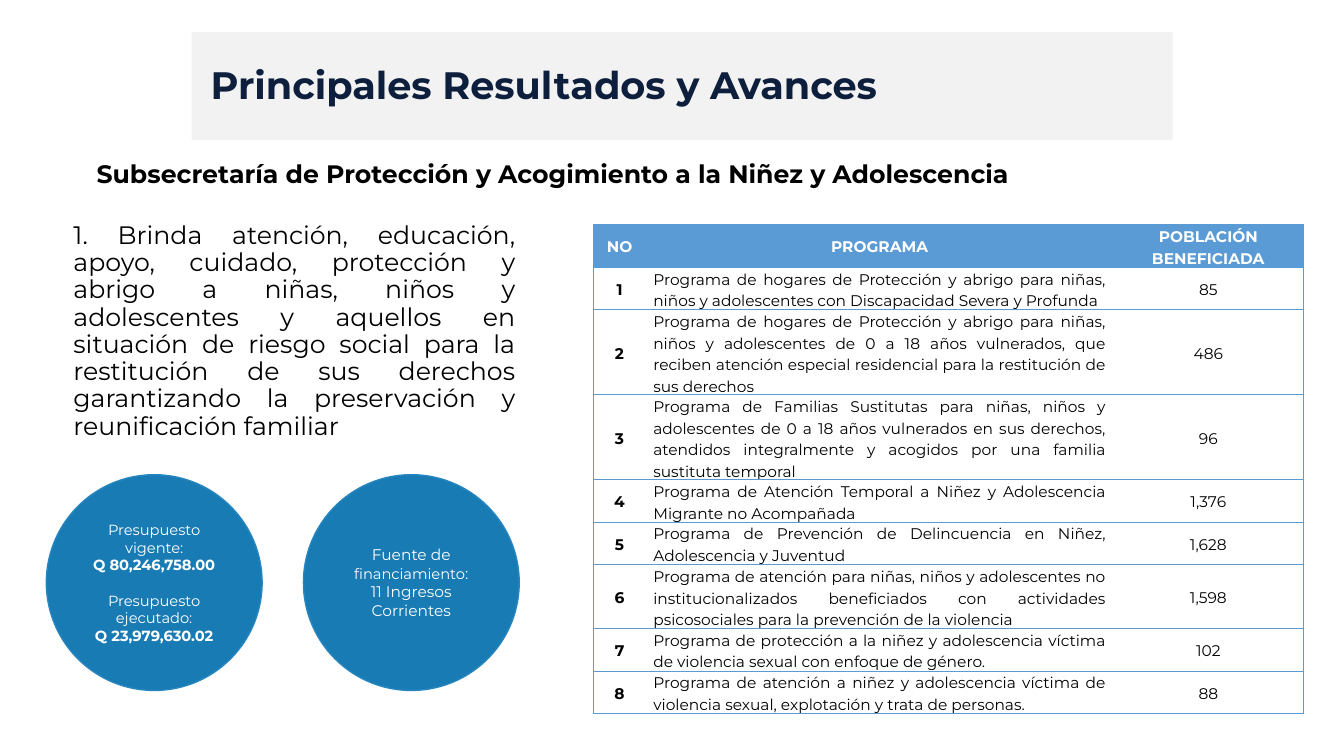
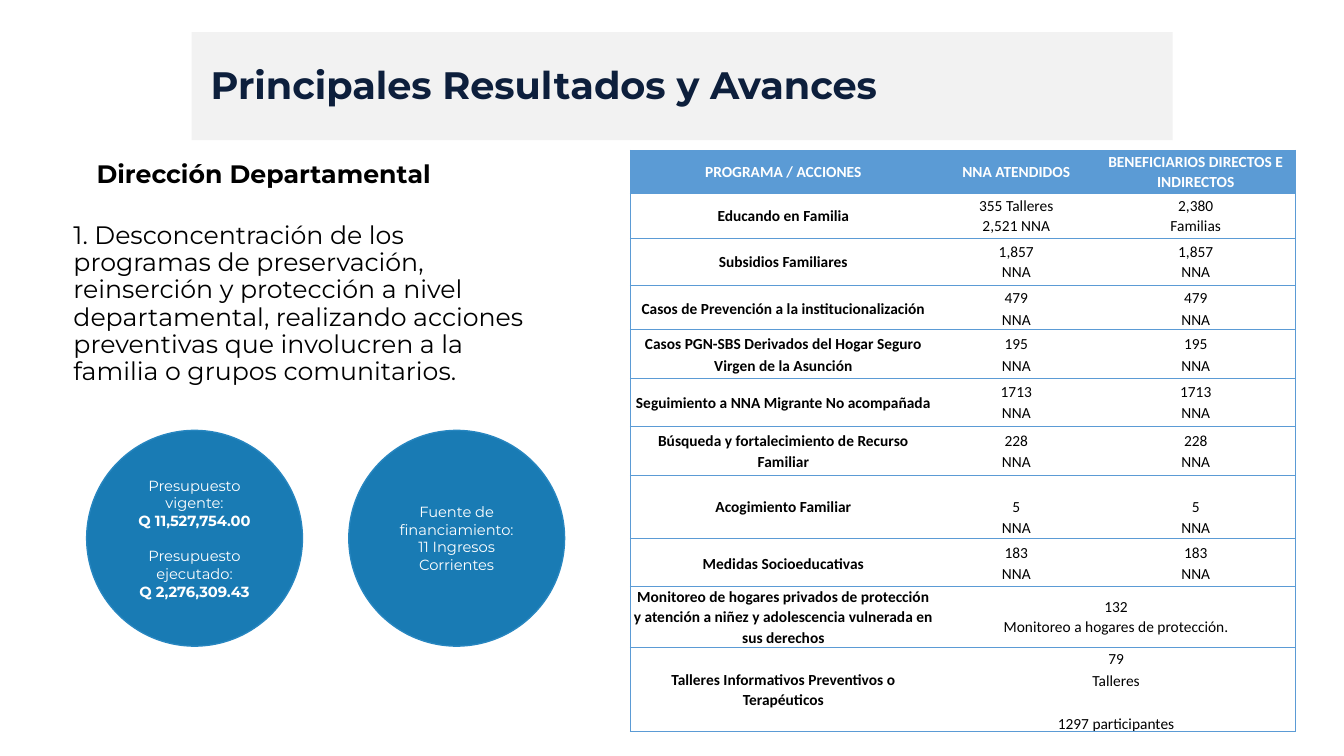
from dataclasses import dataclass

from lxml.etree import SubElement
from pptx import Presentation
from pptx.dml.color import RGBColor
from pptx.enum.shapes import MSO_SHAPE
from pptx.enum.text import MSO_ANCHOR, PP_ALIGN
from pptx.oxml.ns import qn
from pptx.util import Inches, Pt


@dataclass(frozen=True)
class Theme:
    """Colours, fonts and type sizes of the presentation."""
    white: str = "FFFFFF"
    black: str = "000000"
    navy: str = "0D1F3C"
    band: str = "F2F2F2"
    circle: str = "197BB4"
    circle_line: str = "2786C0"
    table: str = "5B9BD5"
    font: str = "Montserrat"
    table_font: str = "Calibri"
    title_size: float = 27.3
    body_size: float = 18
    table_size: float = 11
    circle_size: float = 10.5


@dataclass(frozen=True)
class Box:
    """A region of the slide in inches."""
    left: float
    top: float
    width: float
    height: float

    def lengths(self):
        """Return the four measures as lengths."""
        return [Inches(value) for value in (self.left, self.top, self.width, self.height)]


@dataclass(frozen=True)
class Cell:
    """Content and format of one table cell."""
    lines: tuple
    bold: bool = False
    color: str = Theme.black
    align: PP_ALIGN = PP_ALIGN.CENTER
    anchor: MSO_ANCHOR = MSO_ANCHOR.MIDDLE
    spacing: float = 1.15
    top_margin: float = 0
    last_gap: float = 0


THEME = Theme()
BAND_BOX = Box(1.9, 0.32, 9.73, 1.07)
TITLE_BOX = Box(1.99, 0.5, 8.69, 0.73)
SUBTITLE_BOX = Box(0.86, 1.56, 11.5, 0.61)
CIRCLE_SIDE = 2.14
LINE_HEIGHT = 0.21

PROGRAMS = [
    ("Programa de hogares de Protección y abrigo para niñas, niños y adolescentes con "
     "Discapacidad Severa y Profunda", "85", 2),
    ("Programa de hogares de Protección y abrigo para niñas, niños y adolescentes de 0 a 18 años "
     "vulnerados, que reciben atención especial residencial para la restitución de sus derechos",
     "486", 4),
    ("Programa de Familias Sustitutas para niñas, niños y adolescentes de 0 a 18 años vulnerados "
     "en sus derechos, atendidos integralmente y acogidos por una familia sustituta temporal",
     "96", 4),
    ("Programa de Atención Temporal a Niñez y Adolescencia Migrante no Acompañada", "1,376", 2),
    ("Programa de Prevención de Delincuencia en Niñez, Adolescencia y Juventud", "1,628", 2),
    ("Programa de atención para niñas, niños y adolescentes no institucionalizados beneficiados "
     "con actividades psicosociales para la prevención de la violencia", "1,598", 3),
    ("Programa de protección a la niñez y adolescencia víctima de violencia sexual con enfoque "
     "de género.", "102", 2),
    ("Programa de atención a niñez y adolescencia víctima de violencia sexual, explotación y "
     "trata de personas.", "88", 2),
]

ACTIONS = [
    ("Educando en Familia", ("355 Talleres", "2,521 NNA"), ("2,380", "Familias"), 0.44, 1.07),
    ("Subsidios Familiares", ("1,857", "NNA"), ("1,857", "NNA"), 0.47, 1.07),
    ("Casos de Prevención a la institucionalización", ("479", "NNA"), ("479", "NNA"), 0.44, 1.15),
    ("Casos PGN-SBS Derivados del Hogar Seguro Virgen de la Asunción",
     ("195", "NNA"), ("195", "NNA"), 0.48, 1.15),
    ("Seguimiento a NNA Migrante No acompañada", ("1713", "NNA"), ("1713", "NNA"), 0.48, 1.07),
    ("Búsqueda y fortalecimiento de Recurso Familiar", ("228", "NNA"), ("228", "NNA"), 0.49, 1.07),
    ("Acogimiento Familiar", ("5", "NNA"), ("5", "NNA"), 0.62, 1.07),
    ("Medidas Socioeducativas", ("183", "NNA"), ("183", "NNA"), 0.48, 1.15),
    ("Monitoreo de hogares privados de protección y atención a niñez y adolescencia vulnerada "
     "en sus derechos", ("132", "Monitoreo a hogares de protección."), None, 0.6, 1.07),
    ("Talleres Informativos Preventivos o Terapéuticos",
     ("79", "Talleres", "1297 participantes"), None, 0.84, 1.15),
]


def add_run(paragraph, text, size, color, bold=False, font=THEME.font):
    """Append one formatted run to a paragraph."""
    run = paragraph.add_run()
    run.text = text
    run.font.name = font
    run.font.size = Pt(size)
    run.font.bold = bold
    run.font.color.rgb = RGBColor.from_string(color)


def add_text(slide, box, text, size, color, bold=False, align=PP_ALIGN.LEFT,
             anchor=MSO_ANCHOR.TOP):
    """Place a one-paragraph text box."""
    frame = slide.shapes.add_textbox(*box.lengths()).text_frame
    frame.word_wrap = True
    frame.vertical_anchor = anchor
    paragraph = frame.paragraphs[0]
    paragraph.alignment = align
    paragraph.line_spacing = 0.9
    add_run(paragraph, text, size, color, bold)


def add_filled_shape(slide, kind, box, fill, line=None):
    """Place a flat preset shape and return it."""
    shape = slide.shapes.add_shape(kind, *box.lengths())
    shape.shadow.inherit = False
    shape.fill.solid()
    shape.fill.fore_color.rgb = RGBColor.from_string(fill)
    if line:
        shape.line.color.rgb = RGBColor.from_string(line)
        shape.line.width = Pt(1)
    else:
        shape.line.fill.background()
    return shape


def add_heading(slide, subtitle):
    """Place the grey band, the shared title and the subtitle."""
    add_filled_shape(slide, MSO_SHAPE.RECTANGLE, BAND_BOX, THEME.band)
    add_text(slide, TITLE_BOX, "Principales Resultados y Avances", THEME.title_size,
             THEME.navy, bold=True, anchor=MSO_ANCHOR.MIDDLE)
    add_text(slide, SUBTITLE_BOX, subtitle, THEME.body_size, THEME.black, bold=True)


def add_circle(slide, left, top):
    """Place a blue circle and return its text frame."""
    box = Box(left, top, CIRCLE_SIDE, CIRCLE_SIDE)
    shape = add_filled_shape(slide, MSO_SHAPE.OVAL, box, THEME.circle, THEME.circle_line)
    frame = shape.text_frame
    frame.word_wrap = True
    frame.vertical_anchor = MSO_ANCHOR.MIDDLE
    frame.paragraphs[0].alignment = PP_ALIGN.CENTER
    return frame


def add_budget(slide, left, top, pitch, current, executed, funding_size):
    """Place the budget circle and the funding circle side by side."""
    frame = add_circle(slide, left, top)
    lines = ["Presupuesto vigente:", current, "Presupuesto ejecutado:", executed]
    for index, text in enumerate(lines):
        paragraph = frame.add_paragraph() if index else frame.paragraphs[0]
        paragraph.alignment = PP_ALIGN.CENTER
        if index == 2:
            paragraph.space_before = Pt(12.8)
        add_run(paragraph, text, THEME.circle_size, THEME.white, bold=index % 2 == 1)

    paragraph = add_circle(slide, left + pitch, top).paragraphs[0]
    add_run(paragraph, "Fuente de ", funding_size, THEME.white)
    add_run(paragraph, "financiamiento", THEME.circle_size, THEME.white)
    add_run(paragraph, ":", funding_size, THEME.white)
    paragraph.add_line_break()
    add_run(paragraph, "11 Ingresos Corrientes", funding_size, THEME.white)


def set_borders(cell, is_first, is_last):
    """Draw horizontal rules and the outer sides of a cell."""
    properties = cell._tc.get_or_add_tcPr()
    sides = {"a:lnL": is_first, "a:lnR": is_last, "a:lnT": True, "a:lnB": True}
    for tag, visible in sides.items():
        line = SubElement(properties, qn(tag), w=str(Pt(0.5)))
        if visible:
            fill = SubElement(line, qn("a:solidFill"))
            SubElement(fill, qn("a:srgbClr"), val=THEME.table)
        else:
            SubElement(line, qn("a:noFill"))


def fill_cell(cell, content, font, side_margin):
    """Write the content of one table cell."""
    cell.margin_left = cell.margin_right = Inches(side_margin)
    cell.margin_top = Inches(content.top_margin)
    cell.margin_bottom = 0
    cell.vertical_anchor = content.anchor
    frame = cell.text_frame
    for index, text in enumerate(content.lines):
        paragraph = frame.add_paragraph() if index else frame.paragraphs[0]
        paragraph.alignment = content.align
        paragraph.line_spacing = content.spacing
        if index and index == len(content.lines) - 1:
            paragraph.space_before = Pt(content.last_gap)
        add_run(paragraph, text, THEME.table_size, content.color, content.bold, font)


def add_grid(slide, left, top, widths, heights, rows, font, side_margin):
    """Place a table; a None cell is merged into the one before it."""
    box = Box(left, top, sum(widths), sum(heights))
    table = slide.shapes.add_table(len(rows), len(widths), *box.lengths()).table
    table.first_row = table.horz_banding = False
    for column, width in zip(table.columns, widths):
        column.width = Inches(width)
    for row_index, (contents, height) in enumerate(zip(rows, heights)):
        table.rows[row_index].height = Inches(height)
        for column_index, content in enumerate(contents):
            cell = table.cell(row_index, column_index)
            following = contents[column_index + 1:column_index + 2]
            is_last = not following or following[0] is None
            set_borders(cell, column_index == 0, is_last)
            if row_index == 0:
                cell.fill.solid()
                cell.fill.fore_color.rgb = RGBColor.from_string(THEME.table)
            else:
                cell.fill.background()
            if content is None:
                table.cell(row_index, column_index - 1).merge(cell)
            else:
                fill_cell(cell, content, font, side_margin)


def header_row(labels, spacing):
    """Return the cells of a table header."""
    return [Cell((label,), True, THEME.white, spacing=spacing) for label in labels]


def add_programs_table(slide, left, top):
    """Place the table of programmes and people served."""
    rows = [header_row(["NO", "PROGRAMA", "POBLACIÓN BENEFICIADA"], 1.15)]
    for number, (program, people, _) in enumerate(PROGRAMS, 1):
        rows.append([Cell((str(number),), bold=True),
                     Cell((program,), align=PP_ALIGN.JUSTIFY, anchor=MSO_ANCHOR.TOP),
                     Cell((people,))])
    heights = [count * LINE_HEIGHT for count in [2] + [program[2] for program in PROGRAMS]]
    add_grid(slide, left, top, [0.53, 4.63, 1.89], heights, rows, THEME.font, 0.07)


def add_actions_table(slide, left, top):
    """Place the table of actions and beneficiaries."""
    rows = [header_row(["PROGRAMA / ACCIONES", "NNA ATENDIDOS",
                        "BENEFICIARIOS DIRECTOS E INDIRECTOS"], 1.07)]
    for label, attended, beneficiaries, _, spacing in ACTIONS:
        top_margin = 0.2 if label == "Acogimiento Familiar" else 0
        last_gap = 15 if len(attended) == 3 else 0
        label_spacing = 1.07 if beneficiaries is None else spacing
        values = [lines and Cell(lines, spacing=spacing, top_margin=top_margin, last_gap=last_gap)
                  for lines in (attended, beneficiaries)]
        rows.append([Cell((label,), bold=True, spacing=label_spacing), *values])
    heights = [0.43] + [action[3] for action in ACTIONS]
    add_grid(slide, left, top, [3.04, 1.58, 1.98], heights, rows, THEME.table_font, 0.02)


def build_protection(slide):
    """Build the slide on protection and care of children."""
    add_heading(slide, "Subsecretaría de Protección y Acogimiento a la Niñez y Adolescencia")
    add_text(slide, Box(0.63, 2.16, 4.58, 2.28),
             "1. Brinda atención, educación, apoyo, cuidado, protección y abrigo a niñas, niños y "
             "adolescentes y aquellos en situación de riesgo social para la restitución de sus "
             "derechos garantizando la preservación y reunificación familiar",
             THEME.body_size, THEME.black, align=PP_ALIGN.JUSTIFY)
    add_budget(slide, 0.46, 4.71, 2.55, "Q 80,246,758.00", "Q 23,979,630.02", 11)
    add_programs_table(slide, 5.88, 2.23)


def build_departments(slide):
    """Build the slide on the departmental directorate."""
    add_heading(slide, "Dirección Departamental")
    add_text(slide, Box(0.63, 2.16, 4.82, 1.96),
             "1. Desconcentración de los programas de preservación, reinserción y protección a "
             "nivel departamental, realizando acciones preventivas que involucren a la familia o "
             "grupos comunitarios.", THEME.body_size, THEME.black)
    add_budget(slide, 0.86, 4.27, 2.6, "Q 11,527,754.00", "Q 2,276,309.43", THEME.circle_size)
    add_actions_table(slide, 6.25, 1.49)


def main():
    """Build and save the presentation."""
    presentation = Presentation()
    presentation.slide_width = Inches(13.33)
    presentation.slide_height = Inches(7.5)
    for build in (build_protection, build_departments):
        build(presentation.slides.add_slide(presentation.slide_layouts[6]))
    presentation.save("out.pptx")


if __name__ == "__main__":
    main()
